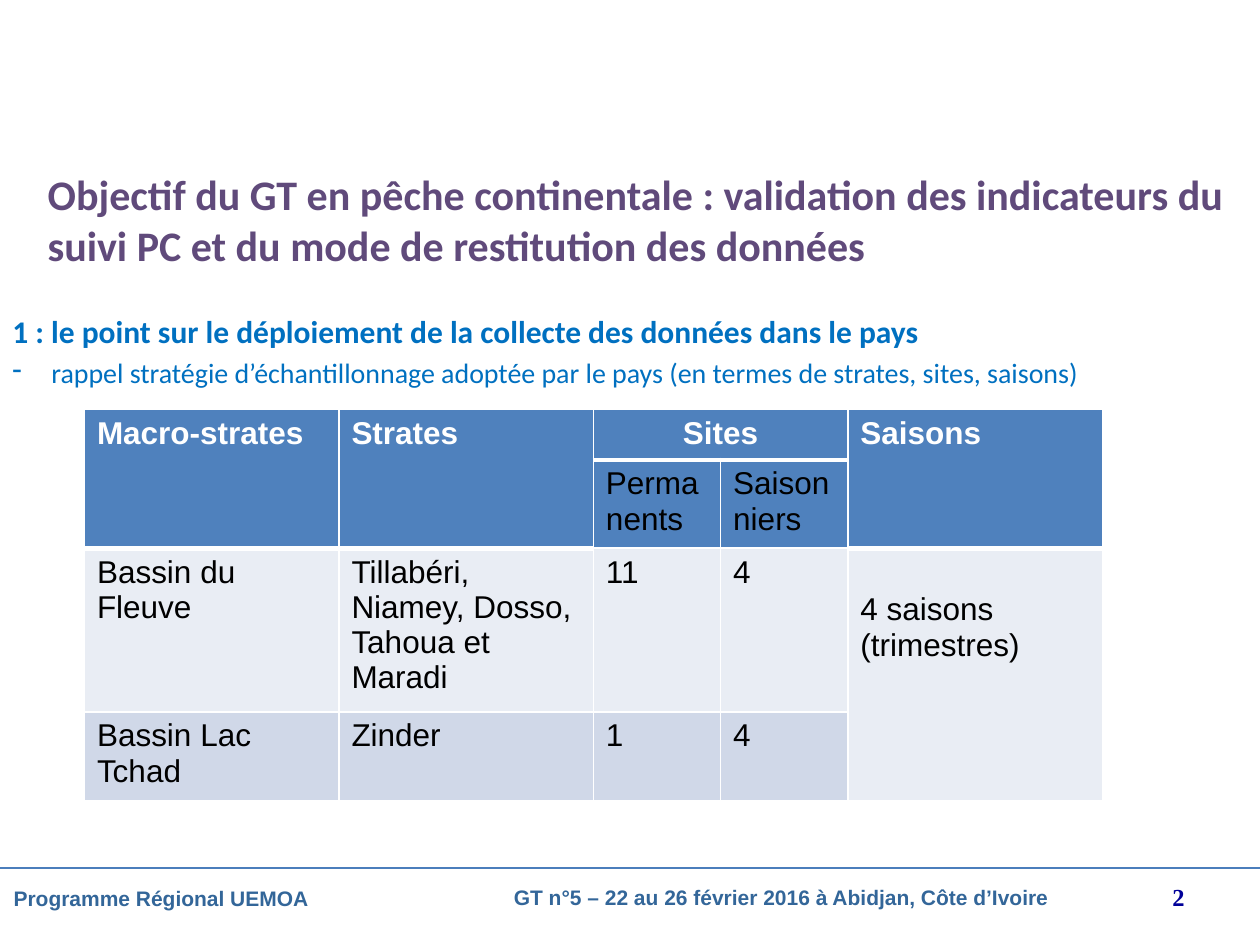
from lxml.etree import SubElement
from pptx import Presentation
from pptx.dml.color import RGBColor
from pptx.enum.shapes import MSO_CONNECTOR
from pptx.enum.text import MSO_ANCHOR, PP_ALIGN
from pptx.oxml.ns import qn
from pptx.util import Inches, Pt

COLORS = {
    "title": "604A7B", "body": "0070C0", "foot": "336699", "number": "000099",
    "rule": "4B7EBC", "head": "4F81BD", "odd": "E9EDF4", "even": "D0D8E8",
    "white": "FFFFFF", "black": "000000",
}


def color(name):
    return RGBColor.from_string(COLORS[name])


def style(para, size, hue, bold=False, face="Arial"):
    for run in para.runs:
        font = run.font
        font.name, font.size, font.bold = face, Pt(size), bold
        font.color.rgb = color(hue)


def add_box(slide, box, text):
    frame = slide.shapes.add_textbox(*map(Inches, box)).text_frame
    frame.word_wrap = True
    frame.text = text
    return frame


def add_title(slide, box):
    frame = add_box(slide, box, "Objectif du GT en pêche continentale : validation des "
                    "indicateurs du suivi PC et du mode de restitution des données")
    frame.vertical_anchor = MSO_ANCHOR.MIDDLE
    style(frame.paragraphs[0], 24, "title", True, "Calibri")


def add_body(slide, box):
    frame = add_box(slide, box, "1 : le point sur le déploiement de la collecte "
                    "des données dans le pays")
    style(frame.paragraphs[0], 18, "body", True, "Calibri")

    # Dash item with a hanging indent
    item = frame.add_paragraph()
    item.text = ("rappel stratégie d’échantillonnage adoptée par le pays "
                 "(en termes de strates, sites, saisons)")
    props = item._p.get_or_add_pPr()
    props.set("marL", str(Inches(0.31)))
    props.set("indent", str(-Inches(0.31)))
    SubElement(props, qn("a:buChar"), char="-")
    item.space_before = Pt(3.2)
    style(item, 16, "body", False, "Calibri")


def add_edges(cell, base):
    props = cell._tc.get_or_add_tcPr()
    for side, width in (("L", 1), ("R", 1), ("T", 1), ("B", base)):
        line = SubElement(props, qn(f"a:ln{side}"), w=str(Pt(width)))
        fill = SubElement(line, qn("a:solidFill"))
        SubElement(fill, qn("a:srgbClr"), val=COLORS["white"])


def add_grid(slide, box):
    rows = [
        ["Macro-strates", "Strates", "Sites", "", "Saisons"],
        ["", "", "Permanents", "Saisonniers", ""],
        ["Bassin du Fleuve", "Tillabéri, Niamey, Dosso, Tahoua et Maradi",
         "11", "4", "4 saisons (trimestres)"],
        ["Bassin Lac Tchad", "Zinder", "1", "4", ""],
    ]
    fills = ["head", "head", "odd", "even"]
    table = slide.shapes.add_table(4, 5, *map(Inches, box)).table
    for col, share in zip(table.columns, (2, 2, 1, 1, 2)):
        col.width = Inches(box[2] * share / 8)
    for row, height in zip(table.rows, (0.38, 0.66, 1.22, 0.66)):
        row.height = Inches(height)

    # Cell text, borders and fills
    for r, texts in enumerate(rows):
        for c, text in enumerate(texts):
            cell = table.cell(r, c)
            cell.text = text
            thick = r == 0 or (r == 1 and c in (0, 1, 4))
            add_edges(cell, 3 if thick else 1)
            cell.fill.solid()
            cell.fill.fore_color.rgb = color("odd" if r > 1 and c == 4 else fills[r])
            style(cell.text_frame.paragraphs[0], 18,
                  "white" if r == 0 else "black", r == 0)

    # Merged cells: top, left, bottom, right
    for top, left, low, right in ((0, 0, 1, 0), (0, 1, 1, 1), (0, 2, 0, 3),
                                  (0, 4, 1, 4), (2, 4, 3, 4)):
        table.cell(top, left).merge(table.cell(low, right))
    table.cell(0, 2).text_frame.paragraphs[0].alignment = PP_ALIGN.CENTER
    table.cell(2, 4).margin_top = Inches(0.35)


def add_footer(slide, box):
    left, top, width, height = box
    rule = slide.shapes.add_connector(
        MSO_CONNECTOR.STRAIGHT, Inches(left), Inches(top),
        Inches(left + width), Inches(top))
    rule.line.color.rgb = color("rule")
    rule.line.width = Pt(0.75)
    SubElement(rule._element.spPr, qn("a:effectLst"))

    # Programme, event and slide number
    parts = [
        (0.01, 0.09, 4.1, "Programme Régional UEMOA", 12, "foot", "Arial"),
        (3.98, 0.08, 5.2, "GT n°5 – 22 au 26 février 2016 à Abidjan, Côte d’Ivoire",
         12, "foot", "Arial"),
        (8.78, 0.06, 0.72, "2", 14, "number", "Times New Roman"),
    ]
    for x, y, wide, text, size, hue, face in parts:
        frame = add_box(slide, (left + x, top + y, wide, height), text)
        style(frame.paragraphs[0], size, hue, True, face)
    frame.paragraphs[0].alignment = PP_ALIGN.RIGHT


def main():
    deck = Presentation()
    deck.slide_width, deck.slide_height = Inches(10), Inches(7.5)
    slide = deck.slides.add_slide(deck.slide_layouts[6])
    add_footer(slide, (0, 6.89, 10, 0.4))
    add_body(slide, (0, 2.43, 10, 0.8))
    add_title(slide, (0.28, 1.15, 9.57, 1.18))
    add_grid(slide, (0.67, 3.25, 8.08, 2.92))
    deck.save("out.pptx")


if __name__ == "__main__":
    main()
